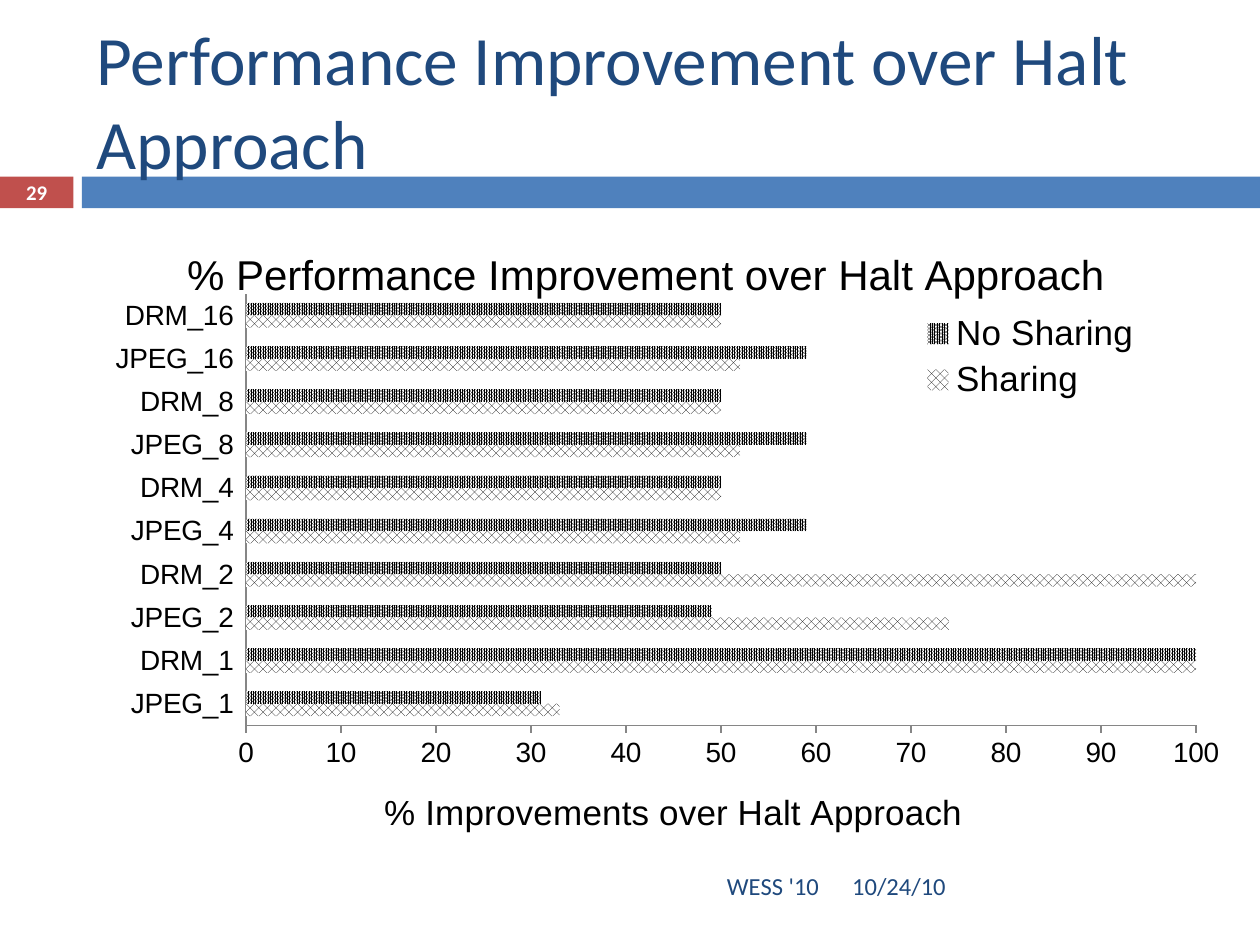
from lxml import etree
from pptx import Presentation
from pptx.chart.data import CategoryChartData
from pptx.dml.color import RGBColor
from pptx.enum import chart as ch, dml, shapes, text
from pptx.util import Cm, Pt

TITLE = "Performance Improvement over Halt Approach"
CHART_TITLE = "% Performance Improvement over Halt Approach"
AXIS_TITLE = "% Improvements over Halt Approach"
NAVY, BLUE, RED, WHITE, BLACK, GREY = (
    "1F497D", "4F81BD", "C0504D", "FFFFFF", "000000", "868686")

CATEGORIES = [f"{app}_{n}" for n in (1, 2, 4, 8, 16) for app in ("JPEG", "DRM")]
SERIES = [  # name, fill pattern, values
    ("Sharing ", dml.MSO_PATTERN.PERCENT_50,
     (33, 100, 74, 100, 52, 50, 52, 50, 52, 50)),
    ("No Sharing", dml.MSO_PATTERN.PERCENT_90,
     (31, 100, 49, 50, 59, 50, 59, 50, 59, 50)),
]
BANDS = [  # left, width, colour
    (0, 1.48, RED),
    (1.65, 23.75, BLUE),
]
LABELS = [  # text, box, alignment, size, colour, bold
    ("10/24/10", (16.93, 17.36, 7.41, 1.01), text.PP_ALIGN.LEFT, 14, NAVY, False),
    ("WESS '10", (1.69, 17.36, 15.07, 1.01), text.PP_ALIGN.RIGHT, 14, NAVY, False),
    ("29", (0, 3.53, 1.48, 0.69), text.PP_ALIGN.CENTER, 11.9, WHITE, True),
]


def rgb(value):
    return RGBColor.from_string(value)


def box(*lengths):
    return [Cm(v) for v in lengths]


def style(font, size, color, name="Calibri", bold=False):
    font.size, font.name, font.bold = Pt(size), name, bold
    font.color.rgb = rgb(color)


def place(part, index, target=None, **fractions):
    """Give a chart part a manual layout, in fractions of the chart area."""
    ns = part.nsmap["c"]
    for old in part.findall(f"{{{ns}}}layout"):
        part.remove(old)
    layout = etree.Element(f"{{{ns}}}layout")
    manual = etree.SubElement(layout, f"{{{ns}}}manualLayout")
    settings = {"layoutTarget": target} if target else {}
    settings.update(xMode="edge", yMode="edge", **fractions)
    for tag, value in settings.items():
        etree.SubElement(manual, f"{{{ns}}}{tag}").set("val", str(value))
    part.insert(index, layout)


def set_title(owner, words, size):
    frame = (owner.chart_title if hasattr(owner, "chart_title")
             else owner.axis_title).text_frame
    frame.text = words
    style(frame.paragraphs[0].font, size, BLACK, "Arial")


def add_label(slide, words, place_at, align, size, color, bold):
    frame = slide.shapes.add_textbox(*box(*place_at)).text_frame
    frame.word_wrap = True
    frame.vertical_anchor = text.MSO_ANCHOR.MIDDLE
    if bold:
        frame.margin_top = frame.margin_bottom = 0
    paragraph = frame.paragraphs[0]
    paragraph.text, paragraph.alignment = words, align
    style(paragraph.font, size, color, bold=bold)


def add_bar_chart(slide):
    data = CategoryChartData()
    data.categories = CATEGORIES
    for name, _, values in SERIES:
        data.add_series(name, values)
    chart = slide.shapes.add_chart(
        ch.XL_CHART_TYPE.BAR_CLUSTERED, *box(1.27, 4.45, 23.5, 12.57), data).chart
    style(chart.font, 20, BLACK, "Arial")
    set_title(chart, CHART_TITLE, 24)
    chart.chart_title.include_in_layout = False

    plot = chart.plots[0]
    plot.gap_width, plot.overlap, plot.vary_by_categories = 150, 0, False
    for series, (_, pattern, _) in zip(plot.series, SERIES):
        fill = series.format.fill
        fill.patterned()
        fill.pattern = pattern
        fill.fore_color.rgb, fill.back_color.rgb = rgb(BLACK), rgb(WHITE)
        series.format.line.fill.background()

    values = chart.value_axis
    values.minimum_scale, values.maximum_scale, values.major_unit = 0, 100, 10
    set_title(values, AXIS_TITLE, 20)
    ticks = ch.XL_TICK_MARK
    for axis, mark in ((chart.category_axis, ticks.NONE), (values, ticks.OUTSIDE)):
        axis.has_major_gridlines = False
        axis.major_tick_mark, axis.minor_tick_mark = mark, ticks.NONE
        axis.tick_label_position = ch.XL_TICK_LABEL_POSITION.LOW
        axis.format.line.color.rgb = rgb(GREY)
        style(axis.tick_labels.font, 16, BLACK, "Arial")

    chart.has_legend = True
    legend = chart.legend
    legend.position = ch.XL_LEGEND_POSITION.TOP
    legend.include_in_layout = True
    style(legend.font, 20, BLACK, "Arial")

    plot_area = chart.element.chart.plotArea
    place(plot_area, 0, "inner", x=0.157, y=0.118, w=0.815, h=0.697)
    place(legend.element if hasattr(legend, "element") else legend._element,
          1, x=0.73, y=0.14, w=0.2, h=0.16)
    place(values.axis_title._element, 1, x=0.27, y=0.91)


def main():
    deck = Presentation()
    deck.slide_width, deck.slide_height = box(25.4, 19.05)
    slide = deck.slides.add_slide(deck.slide_layouts[5])

    for left, width, color in BANDS:
        band = slide.shapes.add_shape(
            shapes.MSO_SHAPE.RECTANGLE, *box(left, 3.56, width, 0.64))
        band.shadow.inherit = False
        band.fill.solid()
        band.fill.fore_color.rgb = rgb(color)
        band.line.fill.background()

    title = slide.shapes.title
    title.left, title.top, title.width, title.height = box(1.69, 0.64, 22.66, 2.74)
    frame = title.text_frame
    frame.text = TITLE
    frame.word_wrap = True
    frame.auto_size = text.MSO_AUTO_SIZE.NONE
    frame.vertical_anchor = text.MSO_ANCHOR.MIDDLE
    frame.paragraphs[0].alignment = text.PP_ALIGN.LEFT
    style(frame.paragraphs[0].font, 39.6, NAVY)
    # Title text hangs over the blue band, so it goes in front of it.
    slide.shapes._spTree.append(title.element)

    add_bar_chart(slide)
    for label in LABELS:
        add_label(slide, *label)
    deck.save("out.pptx")


if __name__ == "__main__":
    main()
